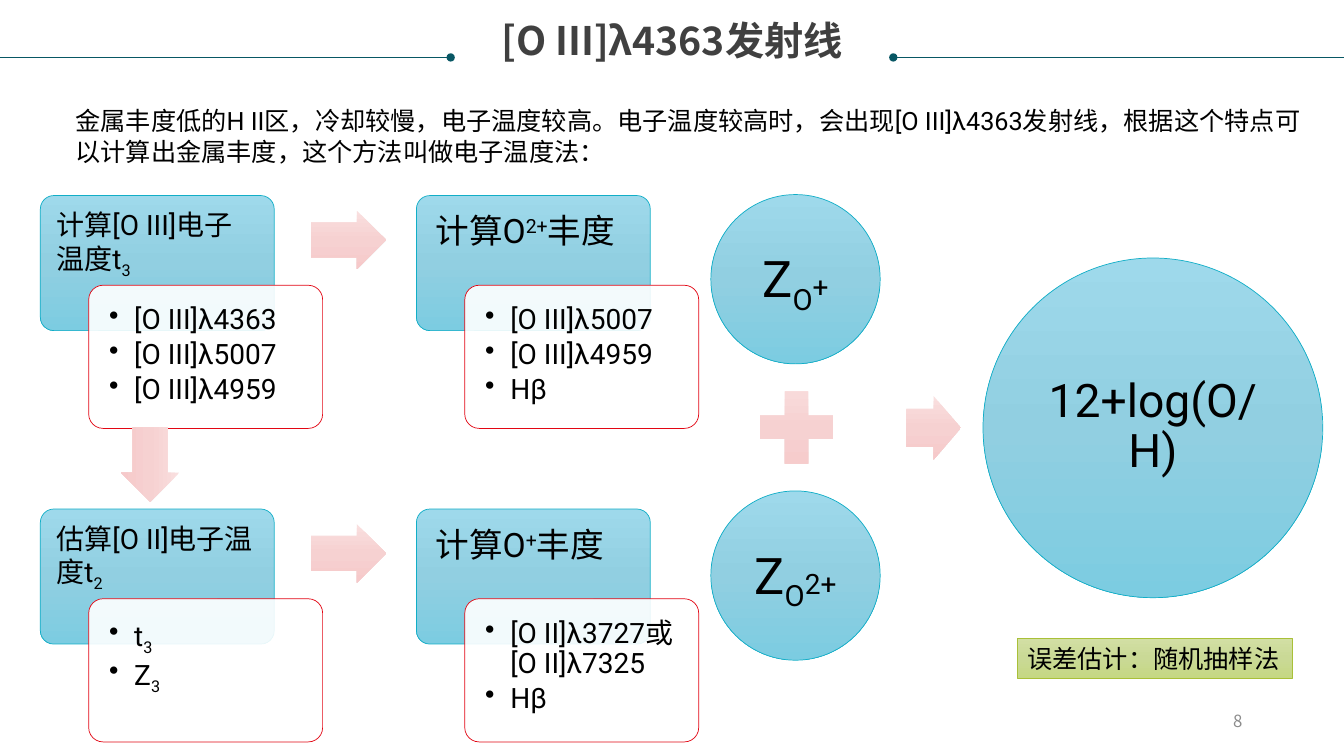
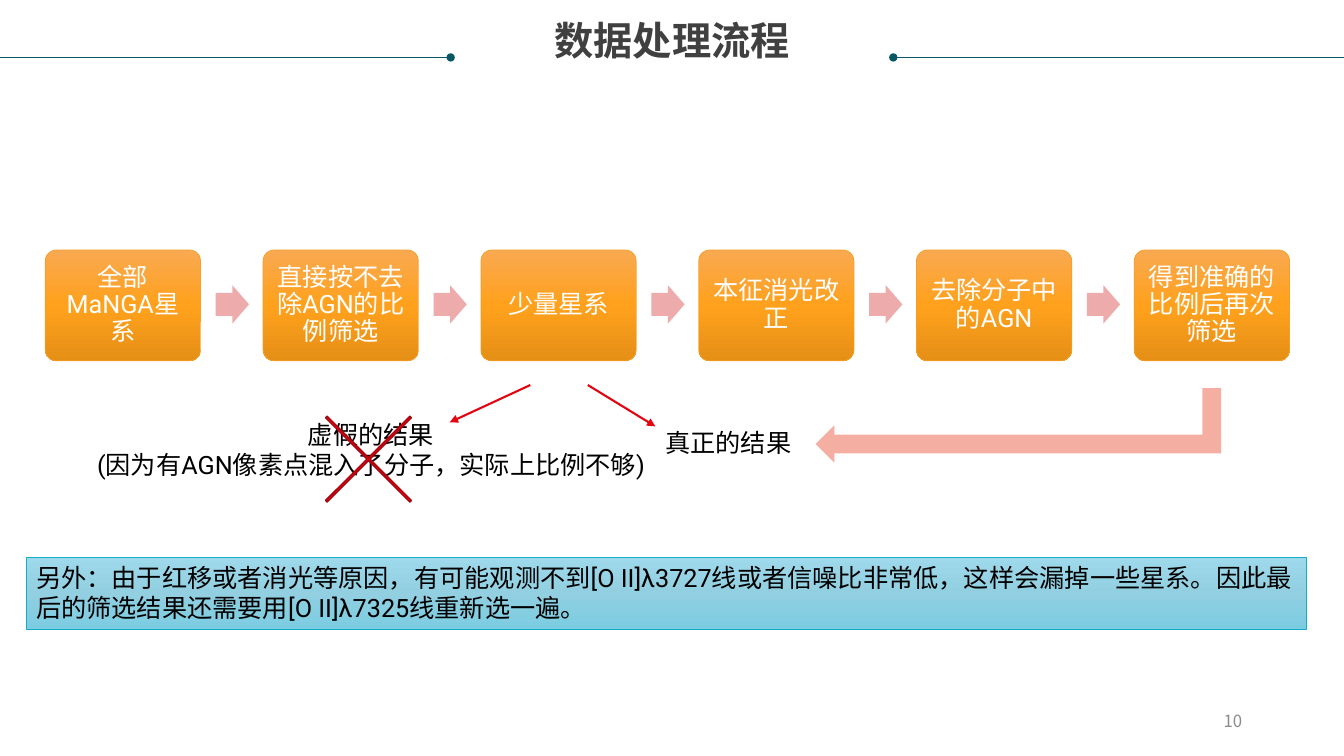
from copy import deepcopy
from dataclasses import dataclass, replace
from typing import Optional

from lxml import etree
from pptx import Presentation
from pptx.dml.color import RGBColor
from pptx.enum.shapes import MSO_CONNECTOR, MSO_SHAPE
from pptx.enum.text import MSO_ANCHOR, PP_ALIGN
from pptx.oxml.ns import qn
from pptx.util import Inches, Pt

LEFT, CENTER, RIGHT = PP_ALIGN.LEFT, PP_ALIGN.CENTER, PP_ALIGN.RIGHT
TOP, MIDDLE = MSO_ANCHOR.TOP, MSO_ANCHOR.MIDDLE
STRAIGHT = MSO_CONNECTOR.STRAIGHT
RECTANGLE, ROUNDED, OVAL = MSO_SHAPE.RECTANGLE, MSO_SHAPE.ROUNDED_RECTANGLE, MSO_SHAPE.OVAL
RIGHT_ARROW, BENT_ARROW = MSO_SHAPE.RIGHT_ARROW, MSO_SHAPE.BENT_UP_ARROW
PLUS, CROSS = MSO_SHAPE.MATH_PLUS, MSO_SHAPE.MATH_MULTIPLY

TITLE_ONLY = 5
LATIN_FONT, CHINESE_FONT = "Roboto", "Noto Sans CJK SC"
BLACK, WHITE, GREY, TITLE_GREY = "000000", "FFFFFF", "8C8C8C", "404040"
TEAL, RED, DARK_RED = "085764", "E20613", "A7040E"
PINK, SALMON = "EEABAB", "EB6047"
SUBSCRIPT, SUPERSCRIPT = -25, 30


@dataclass(frozen=True)
class Paint:
    """Fill colours (one, or three for a vertical gradient), outline and opacity."""
    colors: tuple[str, ...]
    outline: Optional[str] = None
    width: float = 0.5
    opacity: int = 100


BLUE = Paint(("9ED9EB", "91CFE1", "7CCCE1"), "11AEC7")
ORANGE = Paint(("F9A952", "FFA11C", "E58F17"), "F59F26")
GREEN = Paint(("D2DFA4", "CAD996", "C5D883"), "A9C038")
PALE_PINK = Paint(("F9DFDF", "F6D1D1", "F6C9CA"))
CARD = Paint((WHITE,), RED, opacity=90)


@dataclass(frozen=True)
class Place:
    left: float
    top: float
    width: float
    height: float

    def lengths(self) -> tuple:
        return tuple(Inches(n) for n in (self.left, self.top, self.width, self.height))


@dataclass(frozen=True)
class Span:
    text: str
    baseline: int = 0
    size: Optional[float] = None


@dataclass(frozen=True)
class Style:
    size: float = 18
    color: str = BLACK
    font: str = LATIN_FONT
    bold: bool = False
    align: PP_ALIGN = LEFT
    anchor: MSO_ANCHOR = TOP
    line_spacing: float = 1.0
    space_after: float = 0
    bulleted: bool = False
    insets: tuple[float, float, float, float] = (0.1, 0.05, 0.1, 0.05)


def even(inset: float) -> tuple[float, float, float, float]:
    return (inset,) * 4


BODY = Style()
CENTERED = Style(align=CENTER)
TITLE = Style(28, TITLE_GREY, CHINESE_FONT, True, CENTER, MIDDLE, 0.9, insets=even(0))
PAGE_NUMBER = Style(12, GREY, CHINESE_FONT, align=RIGHT, anchor=MIDDLE)
DISC = Style(36, align=CENTER, anchor=MIDDLE, line_spacing=0.9, insets=even(0.05))
HEADING = Style(20, line_spacing=0.9, insets=even(0.12))
LARGE_HEADING = replace(HEADING, size=24, insets=even(0.15))
LIST = Style(20, line_spacing=0.9, space_after=3.5, bulleted=True, insets=even(0.16))
STEP = Style(18, WHITE, align=CENTER, anchor=MIDDLE, line_spacing=0.9, insets=even(0.07))

Paragraph = tuple[Span, ...]


def line(text: str) -> Paragraph:
    return (Span(text),)


def rgb(color: str) -> RGBColor:
    return RGBColor.from_string(color)


def write(shape, paragraphs: list[Paragraph], style: Style) -> None:
    frame = shape.text_frame
    frame.word_wrap = True
    frame.vertical_anchor = style.anchor
    (frame.margin_left, frame.margin_top,
     frame.margin_right, frame.margin_bottom) = map(Inches, style.insets)
    for index, spans in enumerate(paragraphs):
        para = frame.add_paragraph() if index else frame.paragraphs[0]
        para.alignment = style.align
        para.line_spacing = style.line_spacing
        para.space_before = Pt(0)
        para.space_after = Pt(style.space_after)
        if style.bulleted:
            properties = para._p.get_or_add_pPr()
            properties.set("marL", str(Inches(0.25)))
            properties.set("indent", str(Inches(-0.25)))
            etree.SubElement(properties, qn("a:buChar"), char="•")
        for span in spans:
            run = para.add_run()
            run.text = span.text
            run.font.size = Pt(span.size or style.size)
            run.font.bold = style.bold
            run.font.color.rgb = rgb(style.color)
            run.font.name = style.font
            run_properties = run._r.get_or_add_rPr()
            etree.SubElement(run_properties, qn("a:ea"), typeface=CHINESE_FONT)
            if span.baseline:
                run_properties.set("baseline", str(span.baseline * 1000))


def apply_paint(shape, paint: Paint) -> None:
    properties = shape._element.spPr
    if len(paint.colors) == 1:
        shape.fill.solid()
        shape.fill.fore_color.rgb = rgb(paint.colors[0])
        if paint.opacity < 100:
            color = properties.find(qn("a:solidFill"))[0]
            etree.SubElement(color, qn("a:alpha"), val=str(paint.opacity * 1000))
    else:
        shape.fill.gradient()
        shape.fill.gradient_angle = 270
        stops = properties.find(".//" + qn("a:gsLst"))
        stops.append(deepcopy(stops[0]))
        for index, stop in enumerate(shape.fill.gradient_stops):
            stop.position = index / 2
            stop.color.rgb = rgb(paint.colors[index])
    if paint.outline:
        shape.line.color.rgb = rgb(paint.outline)
        shape.line.width = Pt(paint.width)
    else:
        shape.line.fill.background()


def add_figure(page, kind: MSO_SHAPE, place: Place, paint: Paint,
               adjustments: tuple[float, ...] = (), rotation: float = 0):
    shape = page.shapes.add_shape(kind, *place.lengths())
    shape.shadow.inherit = False
    for index, value in enumerate(adjustments):
        shape.adjustments[index] = value
    shape.rotation = rotation
    apply_paint(shape, paint)
    return shape


def add_arrow(page, place: Place, paint: Paint, rotation: float = 0) -> None:
    add_figure(page, RIGHT_ARROW, place, paint, (0.6, 0.5), rotation)


def add_text(page, place: Place, paragraphs: list[Paragraph], style: Style) -> None:
    write(page.shapes.add_textbox(*place.lengths()), paragraphs, style)


def add_line(page, start: tuple[float, float], end: tuple[float, float],
             color: str, width: float, tip: str) -> None:
    """Draw a line whose end carries the given tip."""
    ends = [Inches(n) for n in (*start, *end)]
    connector = page.shapes.add_connector(STRAIGHT, *ends)
    connector.line.color.rgb = rgb(color)
    connector.line.width = Pt(width)
    etree.SubElement(connector.line._get_or_add_ln(), qn("a:tailEnd"), type=tip)
    etree.SubElement(connector._element.spPr, qn("a:effectLst"))


def add_page(deck, title: str, number: str):
    page = deck.slides.add_slide(deck.slide_layouts[TITLE_ONLY])
    heading = page.shapes.title
    heading.left, heading.top, heading.width, heading.height = Place(
        0.25, 0.21, 12.83, 0.42).lengths()
    write(heading, [line(title)], TITLE)
    for outer, inner in ((0, 4.47), (13.33, 8.86)):
        add_line(page, (outer, 0.57), (inner, 0.57), TEAL, 0.5, "oval")
    add_text(page, Place(9.42, 6.95, 3, 0.4), [line(number)], PAGE_NUMBER)
    return page


@dataclass(frozen=True)
class Stage:
    column: int
    row: int
    heading: Paragraph
    style: Style
    items: list[Paragraph]


STAGES = [
    Stage(0, 0, (Span("计算[O III]电子温度t"), Span("3", SUBSCRIPT)), HEADING,
          [line("[O III]λ4363"), line("[O III]λ5007"), line("[O III]λ4959")]),
    Stage(1, 0, (Span("计算O"), Span("2+", SUPERSCRIPT), Span("丰度")), LARGE_HEADING,
          [line("[O III]λ5007"), line("[O III]λ4959"), line("Hβ")]),
    Stage(0, 1, (Span("估算[O II]电子温度t"), Span("2", SUBSCRIPT)), HEADING,
          [(Span("t"), Span("3", SUBSCRIPT)), (Span("Z"), Span("3", SUBSCRIPT))]),
    Stage(1, 1, (Span("计算O"), Span("+", SUPERSCRIPT), Span("丰度")), LARGE_HEADING,
          [line("[O II]λ3727或[O II]λ7325"), line("Hβ")]),
]


def add_stage(page, stage: Stage) -> None:
    left, top = 0.4 + 3.73 * stage.column, 1.94 + 3.11 * stage.row
    box = add_figure(page, ROUNDED, Place(left, top, 2.32, 1.34), BLUE, (0.1,))
    write(box, [stage.heading], stage.style)
    card = add_figure(page, ROUNDED, Place(left + 0.48, top + 0.89, 2.32, 1.42), CARD, (0.1,))
    write(card, stage.items, LIST)
    if stage.column == 0:
        add_arrow(page, Place(left + 2.68, top + 0.15, 0.75, 0.58), PALE_PINK)


def add_disc(page, left: float, top: float, diameter: float,
             spans: Paragraph, style: Style) -> None:
    disc = add_figure(page, OVAL, Place(left, top, diameter, diameter), BLUE)
    write(disc, [spans], style)


def build_emission_page(deck) -> None:
    page = add_page(deck, "[O III]λ4363发射线", "8")
    add_text(page, Place(0.65, 1, 12.44, 0.71), [line(
        "金属丰度低的H II区，冷却较慢，电子温度较高。电子温度较高时，会出现[O III]λ4363发射线，"
        "根据这个特点可以计算出金属丰度，这个方法叫做电子温度法：")], BODY)
    for top, ion in ((1.93, "+"), (4.87, "2+")):
        add_disc(page, 7.05, top, 1.68,
                 (Span("Z"), Span("O", SUBSCRIPT), Span(ion, size=20)), DISC)
    add_figure(page, PLUS, Place(7.41, 3.75, 0.98, 0.98), PALE_PINK)
    add_arrow(page, Place(8.99, 3.93, 0.54, 0.63), PALE_PINK)
    add_disc(page, 9.75, 2.56, 3.37, line("12+log(O/H)"), replace(DISC, size=33))
    for stage in STAGES:
        add_stage(page, stage)
    add_arrow(page, Place(1.12, 4.32, 0.74, 0.58), PALE_PINK, 90)
    note = add_figure(page, RECTANGLE, Place(10.09, 6.33, 2.73, 0.4), GREEN)
    write(note, [line("误差估计：随机抽样法")], BODY)


STEPS = ["全部MaNGA星系", "直接按不去除AGN的比例筛选", "少量星系",
         "本征消光改正", "去除分子中的AGN", "得到准确的比例后再次筛选"]


def build_process_page(deck) -> None:
    page = add_page(deck, "数据处理流程", "10")
    for index, text in enumerate(STEPS):
        left = 0.45 + 2.16 * index
        box = add_figure(page, ROUNDED, Place(left, 2.48, 1.54, 1.1), ORANGE, (0.1,))
        write(box, [line(text)], STEP)
        if index < len(STEPS) - 1:
            add_arrow(page, Place(left + 1.69, 2.83, 0.33, 0.38), Paint((PINK,)))
    add_line(page, (5.26, 3.82), (4.46, 4.19), RED, 1.5, "triangle")
    add_line(page, (5.83, 3.82), (6.5, 4.23), RED, 1.5, "triangle")
    add_text(page, Place(6.5, 4.19, 1.46, 0.4), [line("真正的结果")], BODY)
    add_text(page, Place(0.86, 4.11, 5.64, 0.71), [
        line("虚假的结果"), line("(因为有AGN像素点混入了分子，实际上比例不够)")], CENTERED)
    return_arrow = add_figure(page, BENT_ARROW, Place(9.73, 2.21, 0.74, 4.02),
                              Paint((SALMON,), opacity=50), rotation=270)
    return_arrow._element.spPr.find(qn("a:xfrm")).set("flipH", "1")
    add_figure(page, CROSS, Place(2.85, 3.75, 1.61, 1.61),
               Paint((RED,), DARK_RED, 1), (0.014,))
    note = add_figure(page, RECTANGLE, Place(0.26, 5.53, 12.7, 0.71), BLUE)
    write(note, [line(
        "另外：由于红移或者消光等原因，有可能观测不到[O II]λ3727线或者信噪比非常低，"
        "这样会漏掉一些星系。因此最后的筛选结果还需要用[O II]λ7325线重新选一遍。")], BODY)


def main() -> None:
    deck = Presentation()
    deck.slide_width, deck.slide_height = Inches(13.33), Inches(7.5)
    build_emission_page(deck)
    build_process_page(deck)
    deck.save("out.pptx")


if __name__ == "__main__":
    main()
